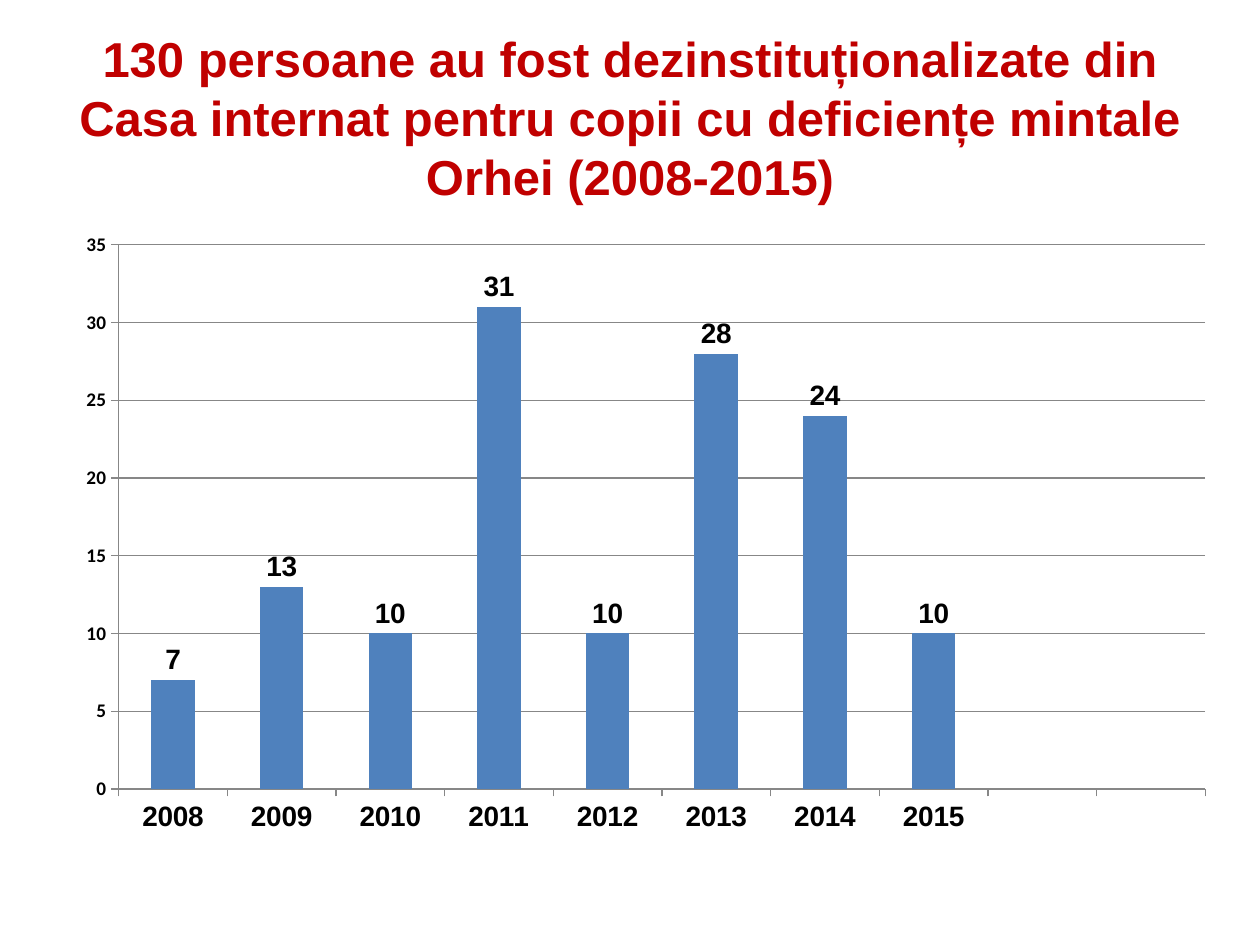
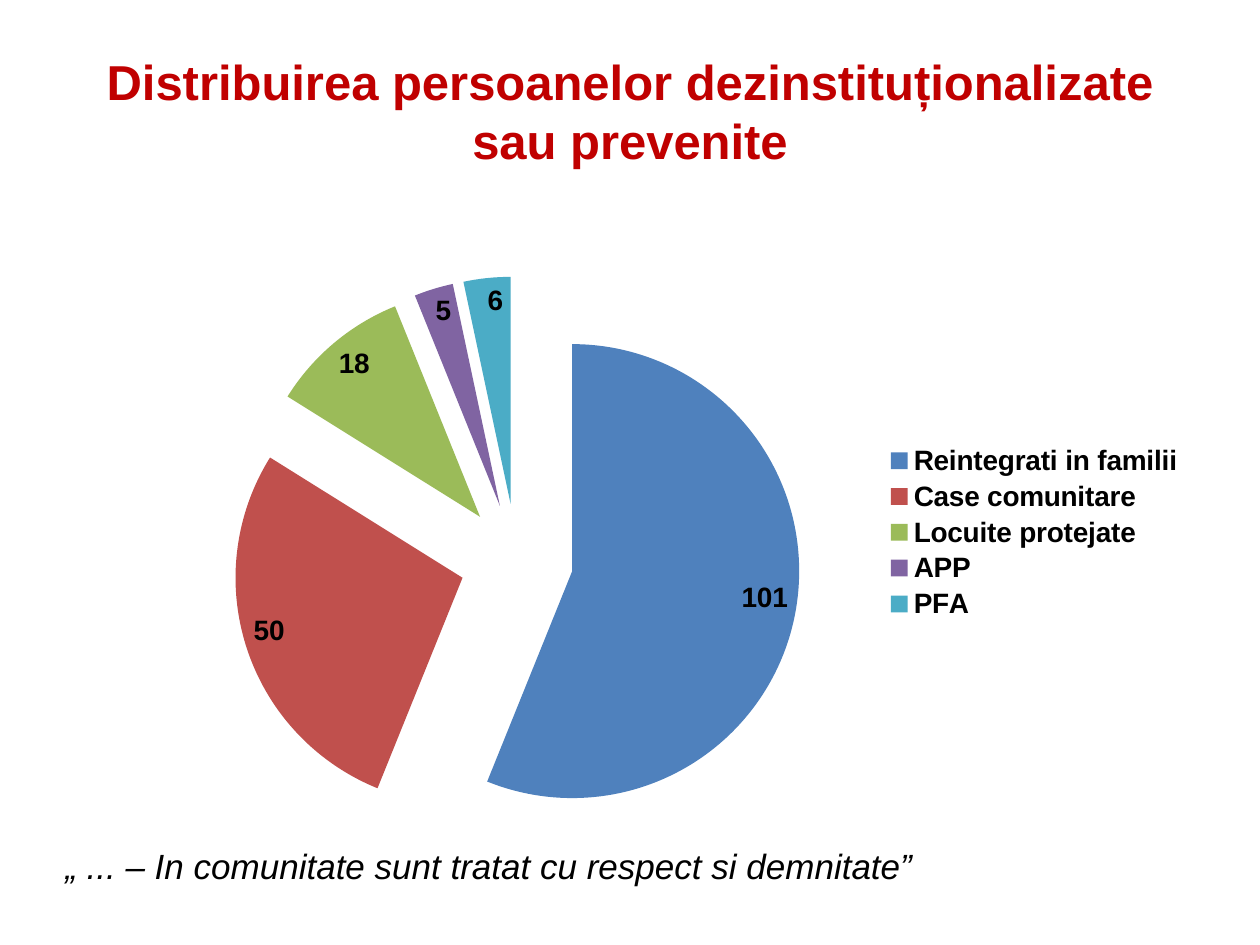
import dataclasses
import typing

import lxml.etree
import pptx
import pptx.chart.chart
import pptx.chart.data
import pptx.dml.color
import pptx.enum.chart
import pptx.enum.text
import pptx.oxml.ns
import pptx.slide
import pptx.util

Pt = pptx.util.Pt
XL = pptx.enum.chart

HEADLINE_RED = "C00000"
INK = "000000"
GRID_GREY = "878787"
SERIES_BLUE = "4F81BD"
DESTINATION_COLORS = (SERIES_BLUE, "C0504D", "9BBB59", "8064A2", "4BACC6")
TEXT_FONT = "Arial"
CHART_FONT = "Calibri"


@dataclasses.dataclass(frozen=True)
class Box:
    left: float
    top: float
    width: float
    height: float

    def points(self) -> tuple:
        return tuple(Pt(side) for side in dataclasses.astuple(self))


@dataclasses.dataclass(frozen=True)
class ChartData:
    box: Box
    kind: XL.XL_CHART_TYPE
    categories: tuple
    values: tuple
    label_position: XL.XL_LABEL_POSITION


YEARLY_DEPARTURES = ChartData(
    Box(36, 126, 666, 356.4),
    XL.XL_CHART_TYPE.COLUMN_CLUSTERED,
    tuple(str(year) for year in range(2008, 2016)) + ("", ""),
    (7, 13, 10, 31, 10, 28, 24, 10, None, None),
    XL.XL_LABEL_POSITION.OUTSIDE_END,
)
DESTINATIONS = ChartData(
    Box(36, 126, 648, 356.4),
    XL.XL_CHART_TYPE.PIE,
    ("Reintegrati in familii", "Case comunitare", "Locuite protejate", "APP", "PFA"),
    (101, 50, 18, 5, 6),
    XL.XL_LABEL_POSITION.INSIDE_END,
)
PIE_LAYOUT = {
    "layoutTarget": "inner",
    "xMode": "edge",
    "yMode": "edge",
    "x": "0.12",
    "y": "0.09",
    "w": "0.56",
    "h": "0.91",
}


def rgb(value: str) -> pptx.dml.color.RGBColor:
    return pptx.dml.color.RGBColor.from_string(value)


def style_font(font: typing.Any, size: float, color: str = INK, name: str = TEXT_FONT,
               bold: bool = False, italic: bool = False) -> None:
    font.size = Pt(size)
    font.name = name
    font.bold = bold
    font.italic = italic
    font.color.rgb = rgb(color)


def add_text(slide: pptx.slide.Slide, box: Box, text: str, *,
             align: typing.Any = pptx.enum.text.PP_ALIGN.LEFT,
             anchor: typing.Any = pptx.enum.text.MSO_ANCHOR.TOP,
             **font_format: typing.Any) -> None:
    frame = slide.shapes.add_textbox(*box.points()).text_frame
    frame.word_wrap = True
    frame.vertical_anchor = anchor
    paragraph = frame.paragraphs[0]
    paragraph.alignment = align
    run = paragraph.add_run()
    run.text = text
    style_font(run.font, **font_format)


def add_headline(slide: pptx.slide.Slide, text: str, top: float) -> None:
    add_text(slide, Box(36, top, 648, 90), text, size=28, color=HEADLINE_RED, bold=True,
             align=pptx.enum.text.PP_ALIGN.CENTER,
             anchor=pptx.enum.text.MSO_ANCHOR.MIDDLE)


def add_chart(slide: pptx.slide.Slide, content: ChartData) -> pptx.chart.chart.Chart:
    data = pptx.chart.data.CategoryChartData()
    data.categories = content.categories
    data.add_series("Series 1", content.values)
    chart = slide.shapes.add_chart(content.kind, *content.box.points(), data).chart
    chart.has_title = False
    chart.has_legend = False
    style_font(chart.font, 10, name=CHART_FONT)
    plot = chart.plots[0]
    plot.has_data_labels = True
    labels = plot.data_labels
    labels.show_value = True
    labels.show_percentage = False
    labels.position = content.label_position
    style_font(labels.font, 16, bold=True)
    return chart


def style_axis(axis: typing.Any, size: float, name: str) -> None:
    axis.major_tick_mark = XL.XL_TICK_MARK.OUTSIDE
    axis.minor_tick_mark = XL.XL_TICK_MARK.NONE
    style_font(axis.tick_labels.font, size, name=name, bold=True)
    style_line(axis.format.line)


def style_line(line: typing.Any) -> None:
    line.width = Pt(0.75)
    line.color.rgb = rgb(GRID_GREY)


def explode_slices(chart: pptx.chart.chart.Chart, percent: int) -> None:
    qn = pptx.oxml.ns.qn
    explosion = lxml.etree.Element(qn("c:explosion"), val=str(percent))
    chart.plots[0].series[0]._element.find(qn("c:tx")).addnext(explosion)


def place_plot(chart: pptx.chart.chart.Chart, settings: dict) -> None:
    qn = pptx.oxml.ns.qn
    plot_area = chart._chartSpace.find(".//" + qn("c:plotArea"))
    layout = plot_area.find(qn("c:layout"))
    if layout is None:
        layout = lxml.etree.Element(qn("c:layout"))
        plot_area.insert(0, layout)
    manual = lxml.etree.SubElement(layout, qn("c:manualLayout"))
    for setting, value in settings.items():
        lxml.etree.SubElement(manual, qn("c:" + setting), val=value)


def build_yearly_slide(slide: pptx.slide.Slide) -> None:
    add_headline(slide, "130 persoane au fost dezinstituționalizate din Casa internat "
                        "pentru copii cu deficiențe mintale Orhei (2008-2015)", 21.6)
    chart = add_chart(slide, YEARLY_DEPARTURES)
    plot = chart.plots[0]
    plot.gap_width = 150
    plot.vary_by_categories = False
    fill = plot.series[0].format.fill
    fill.solid()
    fill.fore_color.rgb = rgb(SERIES_BLUE)
    style_axis(chart.category_axis, 16, TEXT_FONT)
    style_axis(chart.value_axis, 11, CHART_FONT)
    chart.value_axis.has_major_gridlines = True
    style_line(chart.value_axis.major_gridlines.format.line)


def build_destination_slide(slide: pptx.slide.Slide) -> None:
    add_headline(slide, "Distribuirea persoanelor dezinstituționalizate sau prevenite", 18)
    add_text(slide, Box(30.24, 478.8, 660.24, 60.48),
             "„ ... – In comunitate sunt tratat cu respect si demnitate”",
             size=20, italic=True)
    chart = add_chart(slide, DESTINATIONS)
    chart.plots[0].vary_by_categories = True
    explode_slices(chart, 25)
    place_plot(chart, PIE_LAYOUT)
    for index, color in enumerate(DESTINATION_COLORS):
        fill = chart.plots[0].series[0].points[index].format.fill
        fill.solid()
        fill.fore_color.rgb = rgb(color)
    chart.has_legend = True
    chart.legend.position = XL.XL_LEGEND_POSITION.RIGHT
    chart.legend.include_in_layout = True
    style_font(chart.legend.font, 16, bold=True)


def main() -> None:
    presentation = pptx.Presentation()
    presentation.slide_width = Pt(720)
    presentation.slide_height = Pt(540)
    blank = presentation.slide_layouts[6]
    for build in (build_yearly_slide, build_destination_slide):
        build(presentation.slides.add_slide(blank))
    presentation.save("out.pptx")


if __name__ == "__main__":
    main()
